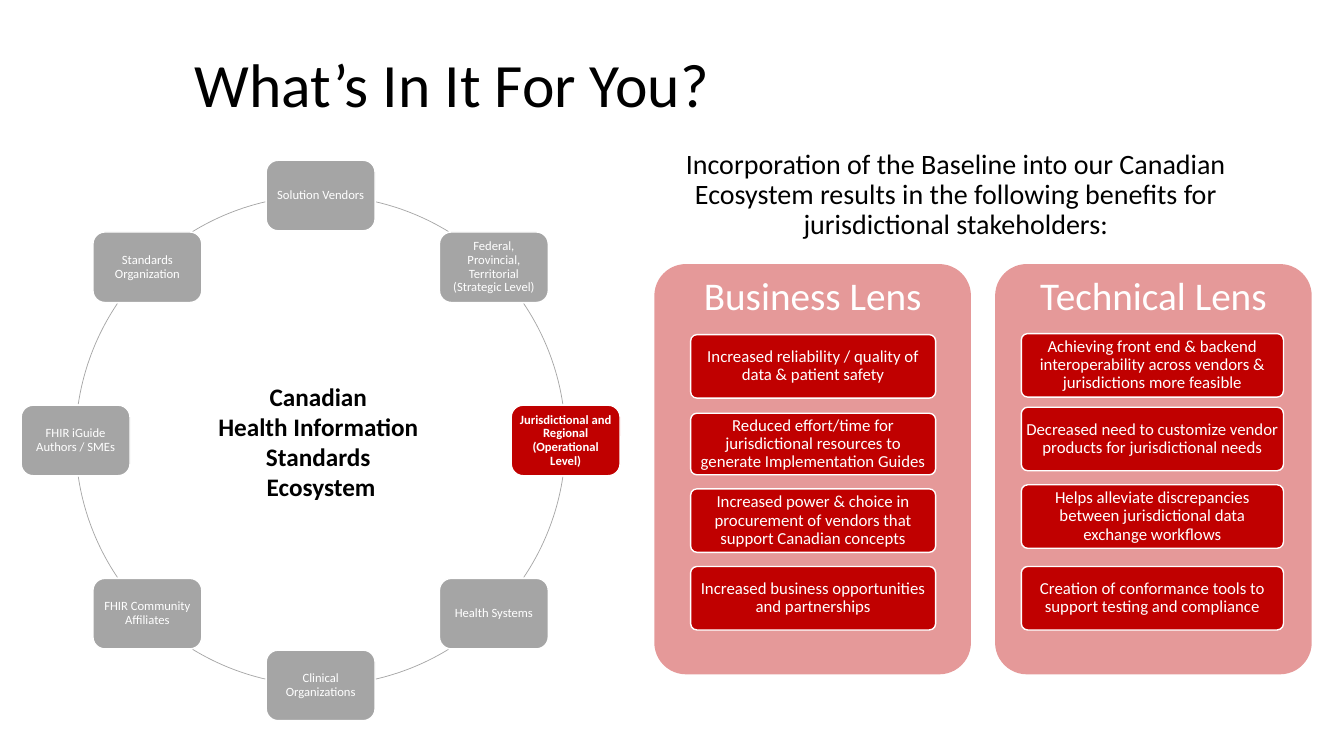
"""Builds the slide on what the baseline offers jurisdictional stakeholders."""
from math import cos, radians, sin

from lxml.etree import SubElement
from pptx import Presentation
from pptx.dml.color import RGBColor
from pptx.enum.shapes import MSO_SHAPE
from pptx.enum.text import MSO_ANCHOR, PP_ALIGN
from pptx.oxml.ns import qn
from pptx.util import Inches, Pt

RED, GREY, WHITE, BLACK = "C00000", "A5A5A5", "FFFFFF", "000000"
CENTRE_X, CENTRE_Y, RADIUS = 3.18, 4.37, 2.43
NODE_WIDTH, NODE_HEIGHT = 1.08, 0.7
STAKEHOLDERS = [
    "Solution Vendors",
    "Federal, Provincial, Territorial (Strategic Level)",
    "Jurisdictional and Regional (Operational Level)",
    "Health Systems",
    "Clinical Organizations",
    "FHIR Community Affiliates",
    "FHIR iGuide Authors / SMEs",
    "Standards Organization",
]
HIGHLIGHT = 2
HALF_RING = [(13, 31.5), (56, 81.5), (98.5, 124), (148.5, 167)]
LENSES = [
    ("Business Lens", 6.49, 6.85, 2.43, [
        (3.32, 0.63, "Increased reliability / quality of data & patient safety"),
        (4.1, 0.61, "Reduced effort/time for jurisdictional resources to "
                    "generate Implementation Guides"),
        (4.85, 0.63, "Increased power & choice in procurement of vendors that "
                     "support Canadian concepts"),
        (5.62, 0.63, "Increased business opportunities and partnerships"),
    ]),
    ("Technical Lens", 9.87, 10.13, 2.6, [
        (3.31, 0.63, "Achieving front end & backend interoperability across "
                     "vendors & jurisdictions more feasible"),
        (4.04, 0.63, "Decreased need to customize vendor products for "
                     "jurisdictional needs"),
        (4.81, 0.63, "Helps alleviate discrepancies between jurisdictional "
                     "data exchange workflows"),
        (5.62, 0.63, "Creation of conformance tools to support testing and "
                     "compliance"),
    ]),
]


def colour(hex_string):
    """Turn a hex string into a colour."""
    return RGBColor.from_string(hex_string)


def assign(target, values):
    """Set each attribute of the target from a dict."""
    for name, value in values.items():
        setattr(target, name, value)


class SlideBuilder:
    """Holds the style and the slide, and draws each kind of element."""

    font_name = "Calibri"

    def __init__(self, slide):
        """Keep the slide to draw on."""
        self.slide = slide

    def fill_text(self, frame, lines, size, ink=WHITE, bold=False,
                  align=PP_ALIGN.CENTER, anchor=MSO_ANCHOR.MIDDLE,
                  inset=(0.1, 0.05), spacing=0.9):
        """Fill a text frame with one paragraph per line."""
        side, end = map(Inches, inset)
        assign(frame, {"word_wrap": True, "vertical_anchor": anchor,
                       "margin_left": side, "margin_right": side,
                       "margin_top": end, "margin_bottom": end})
        frame.text = "\n".join(lines)
        for paragraph in frame.paragraphs:
            assign(paragraph, {"alignment": align, "line_spacing": spacing})
            font = paragraph.runs[0].font
            assign(font, {"name": self.font_name, "size": Pt(size), "bold": bold})
            font.color.rgb = colour(ink)

    def label(self, box, lines, size, **style):
        """Add a text box."""
        label = self.slide.shapes.add_textbox(*map(Inches, box))
        self.fill_text(label.text_frame, lines, size, BLACK, **style)

    def card(self, box, caption, size, fill, rounding, opacity=None,
             outline=True, **style):
        """Add a rounded rectangle with a caption."""
        card = self.slide.shapes.add_shape(
            MSO_SHAPE.ROUNDED_RECTANGLE, *map(Inches, box))
        card.shadow.inherit = False
        card.adjustments[0] = rounding
        card.fill.solid()
        card.fill.fore_color.rgb = colour(fill)
        if opacity:
            tint = card._element.spPr.find(qn("a:solidFill")).find(qn("a:srgbClr"))
            SubElement(tint, qn("a:alpha")).set("val", str(opacity * 1000))
        if outline:
            card.line.color.rgb = colour(WHITE)
            card.line.width = Pt(1)
        else:
            card.line.fill.background()
        self.fill_text(card.text_frame, [caption], size, **style)

    def arc(self, box, start, end):
        """Add an arc between two angles, in degrees clockwise from the top."""
        arc = self.slide.shapes.add_shape(MSO_SHAPE.ARC, *map(Inches, box))
        arc.shadow.inherit = False
        for index, angle in enumerate((start, end)):
            arc.adjustments[index] = (angle - 90) % 360 * 0.6
        arc.fill.background()
        arc.line.color.rgb = colour(GREY)
        arc.line.width = Pt(0.5)


def draw_lenses(builder):
    """Draw both benefit panels."""
    for heading, panel_left, left, width, benefits in LENSES:
        builder.card((panel_left, 2.62, 3.14, 4.07), heading, 28, RED, 0.1,
                     opacity=40, outline=False, anchor=MSO_ANCHOR.TOP,
                     inset=(0.03, 0.03))
        for top, height, benefit in benefits:
            builder.card((left, top, width, height), benefit, 12, RED, 0.1,
                         inset=(0.03, 0.02))


def draw_ecosystem(builder):
    """Draw the ring of stakeholders."""
    ring = (CENTRE_X - RADIUS, CENTRE_Y - RADIUS, 2 * RADIUS, 2 * RADIUS)
    for turn in (0, 180):
        for start, end in HALF_RING:
            builder.arc(ring, start + turn, end + turn)
    for index, stakeholder in enumerate(STAKEHOLDERS):
        angle = radians(index * 360 / len(STAKEHOLDERS))
        left = CENTRE_X + RADIUS * sin(angle) - NODE_WIDTH / 2
        top = CENTRE_Y - RADIUS * cos(angle) - NODE_HEIGHT / 2
        chosen = index == HIGHLIGHT
        builder.card((left, top, NODE_WIDTH, NODE_HEIGHT), stakeholder, 9,
                     RED if chosen else GREY, 0.17, bold=chosen,
                     inset=(0.04, 0.04))
    builder.label((1.51, 3.73, 3.35, 1.31),
                  ["Canadian ", "Health Information ", "Standards ", "Ecosystem"],
                  18, bold=True, anchor=MSO_ANCHOR.TOP, spacing=1.0)


def main():
    """Build and save the presentation."""
    deck = Presentation()
    assign(deck, {"slide_width": Inches(13.33), "slide_height": Inches(7.5)})
    builder = SlideBuilder(deck.slides.add_slide(deck.slide_layouts[6]))
    draw_lenses(builder)
    draw_ecosystem(builder)
    builder.label((1.83, 0.14, 11.5, 1.45), ["What’s In It For You?"], 44,
                  align=PP_ALIGN.LEFT)
    builder.label((6.22, 1.58, 6.52, 0.72),
                  ["Incorporation of the Baseline into our Canadian Ecosystem "
                   "results in the following benefits for jurisdictional "
                   "stakeholders:"], 20, inset=(0.15, 0.15))
    deck.save("out.pptx")


if __name__ == "__main__":
    main()
